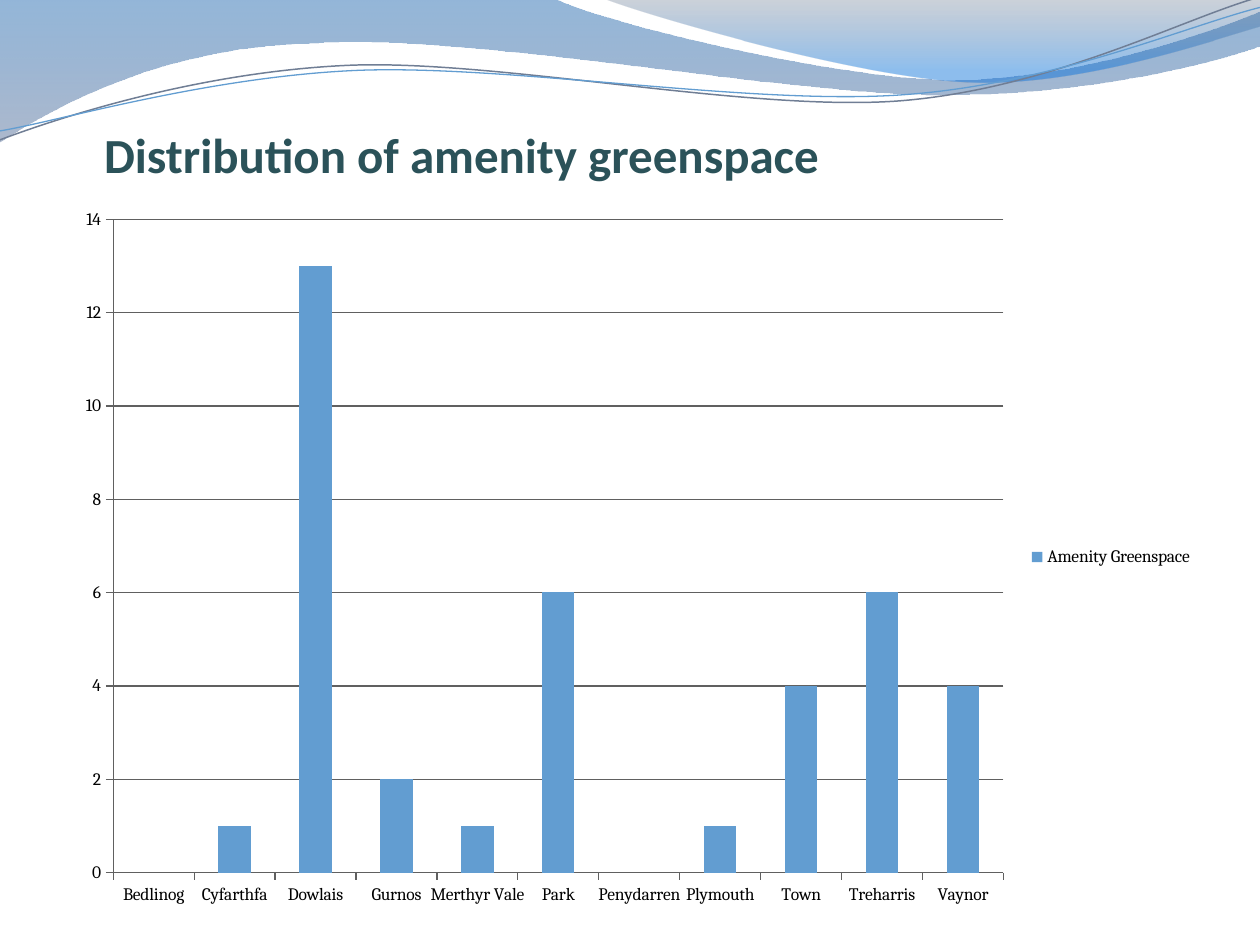
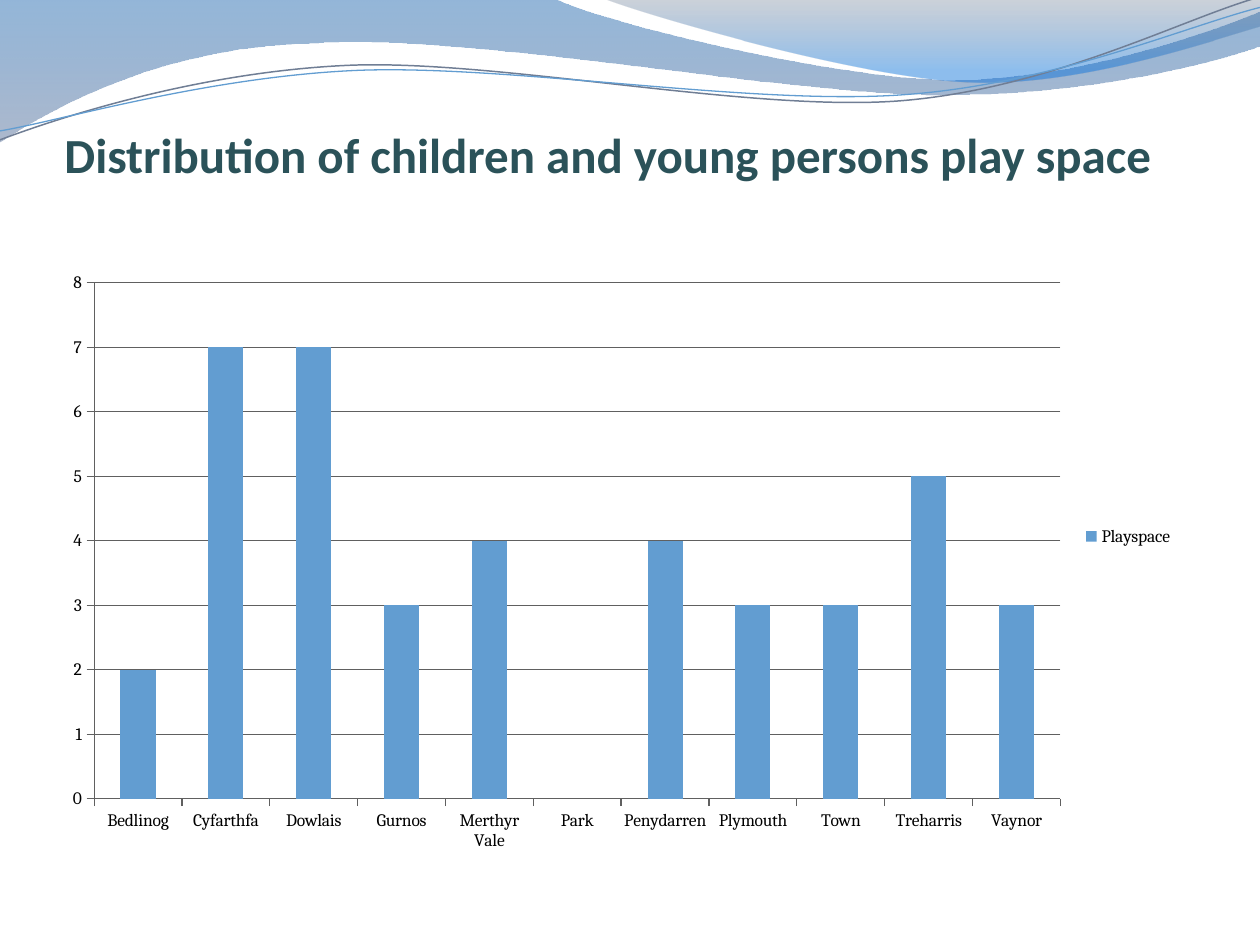
"""Build two slides charting open space by ward under a shared wave header."""
from lxml import etree
from pptx import Presentation
from pptx.chart.data import CategoryChartData
from pptx.dml.color import RGBColor
from pptx.enum.chart import XL_CHART_TYPE, XL_LEGEND_POSITION, XL_TICK_MARK
from pptx.enum.text import MSO_ANCHOR
from pptx.oxml import parse_xml
from pptx.oxml.ns import nsdecls, qn
from pptx.util import Cm, Pt

COLOURS = {
    "title": "2B5259", "bar": "629DD1", "text": "000000", "axis": "606060",
    "band_top": "125EAA", "band_end": "697FA4",
    "sheen_top": "596982", "sheen_end": "0670DA", "line": "707E95",
}
WARDS = ["Bedlinog", "Cyfarthfa", "Dowlais", "Gurnos", "Merthyr Vale", "Park",
         "Penydarren", "Plymouth", "Town", "Treharris", "Vaynor"]
SLIDES = [
    {"title": "Distribution of amenity greenspace", "title_left": 2.1,
     "series": "Amenity Greenspace", "values": [None, 1, 13, 2, 1, 6, None, 1, 4, 6, 4],
     "box": (1.27, 3.93, 23.04, 14.6), "max": 14, "step": 2, "plot": None},
    {"title": "Distribution of children and young persons play space", "title_left": 1.3,
     "series": "Playspace", "values": [2, 7, 7, 3, 4, None, 4, 3, 3, 5, 3],
     "box": (1.1, 4.12, 22.81, 13.39), "max": 8, "step": 1,
     "plot": {"x": 0.035, "y": 0.118, "w": 0.854, "h": 0.777}},
]
TITLE_FONT = {"name": "Calibri", "size": Pt(28), "bold": True}
CHART_FONT = {"name": "Cambria", "size": Pt(10), "bold": False}
TITLE_FRAME = {"word_wrap": True, "vertical_anchor": MSO_ANCHOR.BOTTOM, "margin_left": 0,
               "margin_right": 0, "margin_top": Cm(0.13), "margin_bottom": 0}
LINE_TILT = 357.3
WAVES = [
    {"start": (0, 0), "parts": [
        (11.18, -0.03), (12.09, 0.43, 16.87, 1.6, 19.25, 1.6),
        (21.67, 1.6, 24.33, 0.66, 25.4, 0.23), (25.43, 0.91),
        (24.97, 1.12, 22.1, 1.93, 18.95, 1.91), (15.8, 1.91, 9.7, 0.71, 6.53, 0.86),
        (3.28, 0.91, 1.17, 2.11, -0.03, 2.87), (0, 0)],
     "stops": [(0, "band_top", 45), (100, "band_end", 55)]},
    {"start": (12.17, -0.03), "parts": [
        (12.93, 0.28, 17.32, 1.57, 19.53, 1.65), (21.74, 1.75, 24.41, 0.81, 25.4, 0.53),
        (25.4, 0), (12.17, -0.03)],
     "stops": [(0, "sheen_top", 30), (80, "sheen_end", 45)]},
    {"start": (-0.05, 2.22), "parts": [
        (1.19, 1.82, 4.02, 1.04, 7.05, 1.05), (10.05, 1.07, 15.02, 2.37, 18.08, 2.29),
        (21.13, 2.2, 23.87, 0.91, 25.41, 0.55)],
     "line": ("line", 0.85)},
    {"start": (-0.04, 2.04), "parts": [
        (1.16, 1.9, 4.18, 1.15, 7.2, 1.16), (10.25, 1.18, 15.13, 2.25, 18.18, 2.17),
        (21.21, 2.1, 23.93, 1.06, 25.45, 0.75)],
     "line": ("bar", 0.75)},
]


def rgb(name):
    return RGBColor.from_string(COLOURS[name])


def set_all(target, values):
    for name, value in values.items():
        setattr(target, name, value)


def bend(s, parts):
    """Turn each run of three line ends that stands for a curve into one Bézier."""
    ends = list(s._element.iter(qn("a:lnTo")))
    for part in parts:
        used, ends = ends[:len(part) // 2], ends[len(part) // 2:]
        if len(used) == 3:
            curve = etree.Element(qn("a:cubicBezTo"))
            used[0].addprevious(curve)
            for end in used:
                curve.append(end[0])
                end.getparent().remove(end)


def add_gradient(s, stops):
    gs = "".join(
        f'<a:gs pos="{pos * 1000}"><a:srgbClr val="{COLOURS[name]}">'
        f'<a:alpha val="{alpha * 1000}"/></a:srgbClr></a:gs>' for pos, name, alpha in stops)
    fill = parse_xml(f'<a:gradFill {nsdecls("a")} rotWithShape="1"><a:gsLst>{gs}</a:gsLst>'
                     '<a:lin ang="5400000" scaled="0"/></a:gradFill>')
    s._element.spPr.find(qn("a:custGeom")).addnext(fill)


def add_wave(slide, wave):
    points = [(Cm(x), Cm(y)) for part in wave["parts"] for x, y in zip(part[::2], part[1::2])]
    builder = slide.shapes.build_freeform(*map(Cm, wave["start"]))
    builder.add_line_segments(points, close="stops" in wave)
    s = builder.convert_to_shape()
    bend(s, wave["parts"])
    s.shadow.inherit = False
    if "stops" in wave:
        add_gradient(s, wave["stops"])
        s.line.fill.background()
    else:
        name, width = wave["line"]
        s.rotation = LINE_TILT
        s.fill.background()
        s.line.color.rgb = rgb(name)
        s.line.width = Pt(width)


def add_title(slide, text, left):
    tf = slide.shapes.add_textbox(Cm(left), Cm(0.52), Cm(22.86), Cm(3.18)).text_frame
    set_all(tf, TITLE_FRAME)
    r = tf.paragraphs[0].add_run()
    r.text = text
    set_all(r.font, TITLE_FONT)
    r.font.color.rgb = rgb("title")


def place_plot(chart, plot):
    area = chart._chartSpace.chart.plotArea
    for old in area.findall(qn("c:layout")):
        area.remove(old)
    layout = etree.Element(qn("c:layout"))
    manual = etree.SubElement(layout, qn("c:manualLayout"))
    settings = {"layoutTarget": "inner", "xMode": "edge", "yMode": "edge", **plot}
    for name, value in settings.items():
        etree.SubElement(manual, qn(f"c:{name}")).set("val", str(value))
    area.insert(0, layout)


def add_ward_chart(slide, item):
    data = CategoryChartData()
    data.categories = WARDS
    data.add_series(item["series"], item["values"])
    chart = slide.shapes.add_chart(
        XL_CHART_TYPE.COLUMN_CLUSTERED, *map(Cm, item["box"]), data).chart
    set_all(chart, {"has_title": False, "has_legend": True})
    set_all(chart.legend, {"position": XL_LEGEND_POSITION.RIGHT, "include_in_layout": False})
    set_all(chart.font, CHART_FONT)
    chart.font.color.rgb = rgb("text")

    bars = chart.plots[0]
    set_all(bars, {"gap_width": 150, "vary_by_categories": False})
    fill = bars.series[0].format.fill
    fill.solid()
    fill.fore_color.rgb = rgb("bar")

    values = chart.value_axis
    set_all(values, {"minimum_scale": 0, "maximum_scale": item["max"],
                     "major_unit": item["step"], "has_major_gridlines": True})
    set_all(values.tick_labels, {"number_format": "#,##0", "number_format_is_linked": False})
    for axis in (chart.category_axis, values):
        axis.major_tick_mark = XL_TICK_MARK.OUTSIDE
    for part in (chart.category_axis, values, values.major_gridlines):
        part.format.line.color.rgb = rgb("axis")
        part.format.line.width = Pt(0.75)
    if item["plot"]:
        place_plot(chart, item["plot"])


def main():
    prs = Presentation()
    set_all(prs, {"slide_width": Cm(25.4), "slide_height": Cm(19.05)})
    for item in SLIDES:
        slide = prs.slides.add_slide(prs.slide_layouts[6])
        for wave in WAVES:
            add_wave(slide, wave)
        add_title(slide, item["title"], item["title_left"])
        add_ward_chart(slide, item)
    prs.save("out.pptx")


if __name__ == "__main__":
    main()
